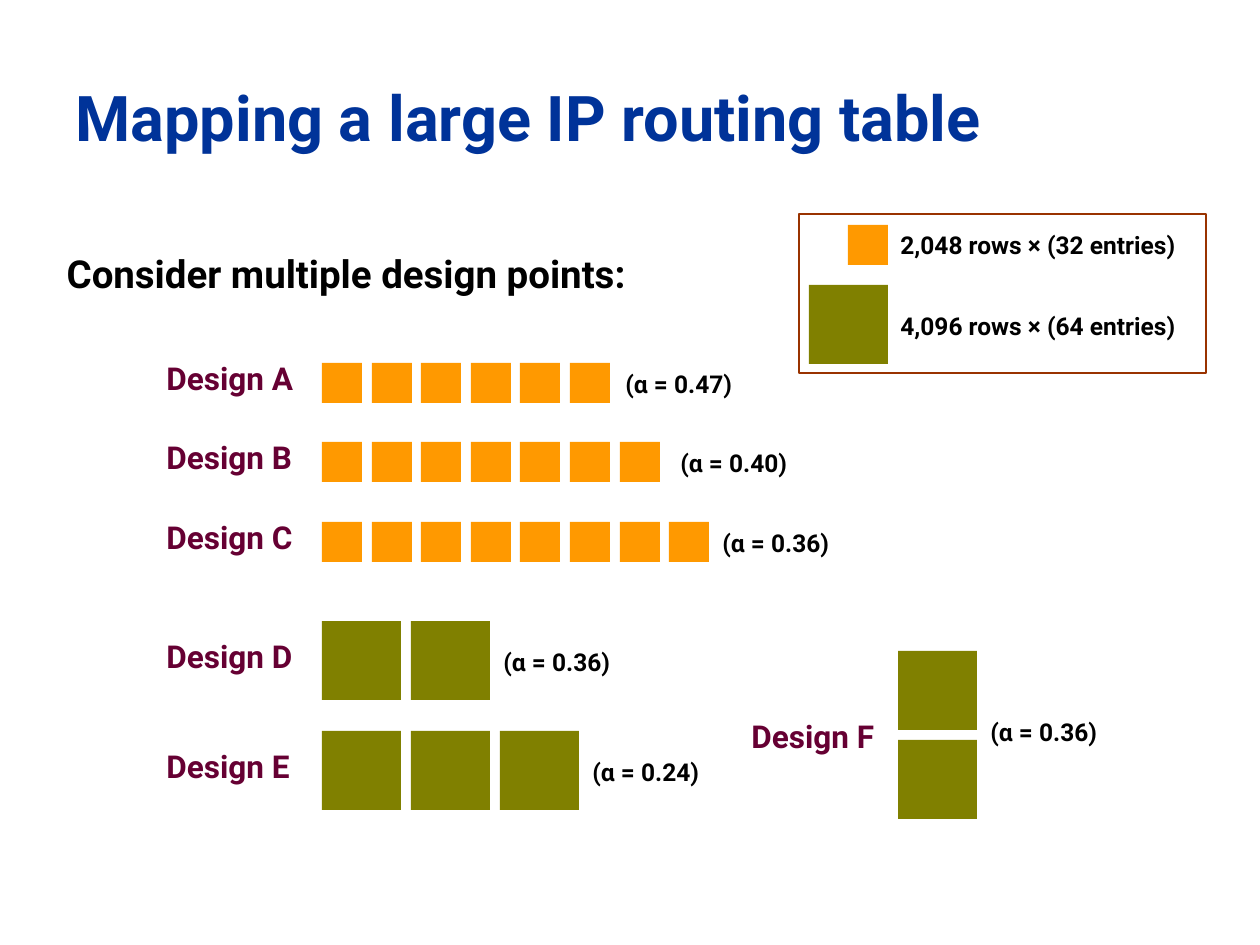
import dataclasses

import lxml.etree
import pptx
import pptx.dml.color
import pptx.enum.shapes
import pptx.enum.text
import pptx.oxml.ns
import pptx.util

SCALE = 914400 / 126


@dataclasses.dataclass(frozen=True)
class Theme:
    """Hold the colours, font and type sizes."""
    font: str = "Roboto"
    title: str = "003399"
    ink: str = "000000"
    label: str = "660033"
    small: str = "FF9900"
    large: str = "808000"
    frame: str = "993300"
    head: int = 36
    lead: int = 22
    name: int = 18
    note: int = 14


THEME = Theme()
SMALL = (40, 49.6, THEME.small)
LARGE = (79, 89.2, THEME.large)


def px(num):
    """Turn px into EMU."""
    return pptx.util.Emu(round(num * SCALE))


def rgb(code):
    """Turn a hex code into a colour."""
    return pptx.dml.color.RGBColor.from_string(code)


def put(shape, box):
    """Move a shape to a box."""
    shape.left, shape.top, shape.width, shape.height = map(px, box)


def write(para, text, size, color):
    """Add one bold run to a paragraph."""
    run = para.add_run()
    run.text = text
    font = run.font
    font.name, font.size, font.bold = THEME.font, pptx.util.Pt(size), True
    font.color.rgb = rgb(color)


def label(slide, box, text, size, color):
    """Add a one-line text box."""
    frame = slide.shapes.add_textbox(*map(px, box)).text_frame
    frame.word_wrap = True
    write(frame.paragraphs[0], text, size, color)


def block(slide, box, fill=None, line=None):
    """Add a plain rectangle."""
    kind = pptx.enum.shapes.MSO_SHAPE.RECTANGLE
    shape = slide.shapes.add_shape(kind, *map(px, box))
    shape.shadow.inherit = False
    if fill:
        shape.fill.solid()
        shape.fill.fore_color.rgb = rgb(fill)
    else:
        shape.fill.background()
    if line:
        shape.line.color.rgb = rgb(line)
        shape.line.width = pptx.util.Pt(1.5)
    else:
        shape.line.fill.background()


def header(slide, box):
    """Fill the title placeholder."""
    title = slide.shapes.title
    put(title, box)
    frame = title.text_frame
    frame.auto_size = pptx.enum.text.MSO_AUTO_SIZE.NONE
    frame.vertical_anchor = pptx.enum.text.MSO_ANCHOR.MIDDLE
    para = frame.paragraphs[0]
    para.alignment = pptx.enum.text.PP_ALIGN.LEFT
    write(para, "Mapping a large IP routing table", THEME.head, THEME.title)


def intro(slide, box):
    """Fill the body placeholder without a bullet."""
    body = slide.placeholders[1]
    put(body, box)
    frame = body.text_frame
    frame.auto_size = pptx.enum.text.MSO_AUTO_SIZE.NONE
    para = frame.paragraphs[0]
    para.space_before = pptx.util.Pt(0)
    props = para._p.get_or_add_pPr()
    props.set("marL", str(px(48)))
    props.set("indent", str(px(-48)))
    lxml.etree.SubElement(props, pptx.oxml.ns.qn("a:buNone"))
    write(para, "Consider multiple design points:", THEME.lead, THEME.ink)


def legend(slide, box):
    """Draw the framed key of both block sizes."""
    x, y, wide, high = box
    rows = (
        (SMALL, 11, 10, "2,048 rows × (32 entries)"),
        (LARGE, 71, 91, "4,096 rows × (64 entries)"),
    )
    for (size, _, fill), top, base, text in rows:
        block(slide, (x + 89 - size, y + top, size, size), fill)
        label(slide, (x + 89, y + base, 316, 42), text, THEME.note, THEME.ink)
    block(slide, (x, y, wide, high), line=THEME.frame)


def design(slide, box, key, kind, count, alpha, drops, down=False):
    """Draw a design: its name, its blocks and its alpha value."""
    x, y, wide, start = box
    size, step, fill = kind
    name, note = drops
    label(slide, (x, y + name, 160, 50), f"Design {key}", THEME.name, THEME.label)
    for i in range(count):
        move = round(i * step)
        dx, dy = (0, move) if down else (move, 0)
        block(slide, (x + start + dx, y + dy, size, size), fill)
    spot = (x + wide, y + note, 144, 42)
    label(slide, spot, f"(α = {alpha})", THEME.note, THEME.ink)


def main():
    """Build and save the slide."""
    deck = pptx.Presentation()
    deck.slide_width, deck.slide_height = px(1260), px(945)
    slide = deck.slides.add_slide(deck.slide_layouts[1])
    header(slide, (63, 38, 1134, 157))
    intro(slide, (54, 244, 1134, 73))
    legend(slide, (799, 214, 407, 159))
    rows = (
        ("A", 363, SMALL, 6, "0.47", 459, (-10, 0)),
        ("B", 442, SMALL, 7, "0.40", 514, (-10, 0)),
        ("C", 522, SMALL, 8, "0.36", 556, (-10, 0)),
        ("D", 621, LARGE, 2, "0.36", 337, (10, 20)),
        ("E", 731, LARGE, 3, "0.24", 426, (10, 20)),
    )
    for key, top, kind, count, alpha, wide, drops in rows:
        design(slide, (154, top, wide, 168), key, kind, count, alpha, drops)
    design(slide, (739, 651, 239, 159), "F", LARGE, 2, "0.36", (60, 60), True)
    deck.save("out.pptx")


if __name__ == "__main__":
    main()
